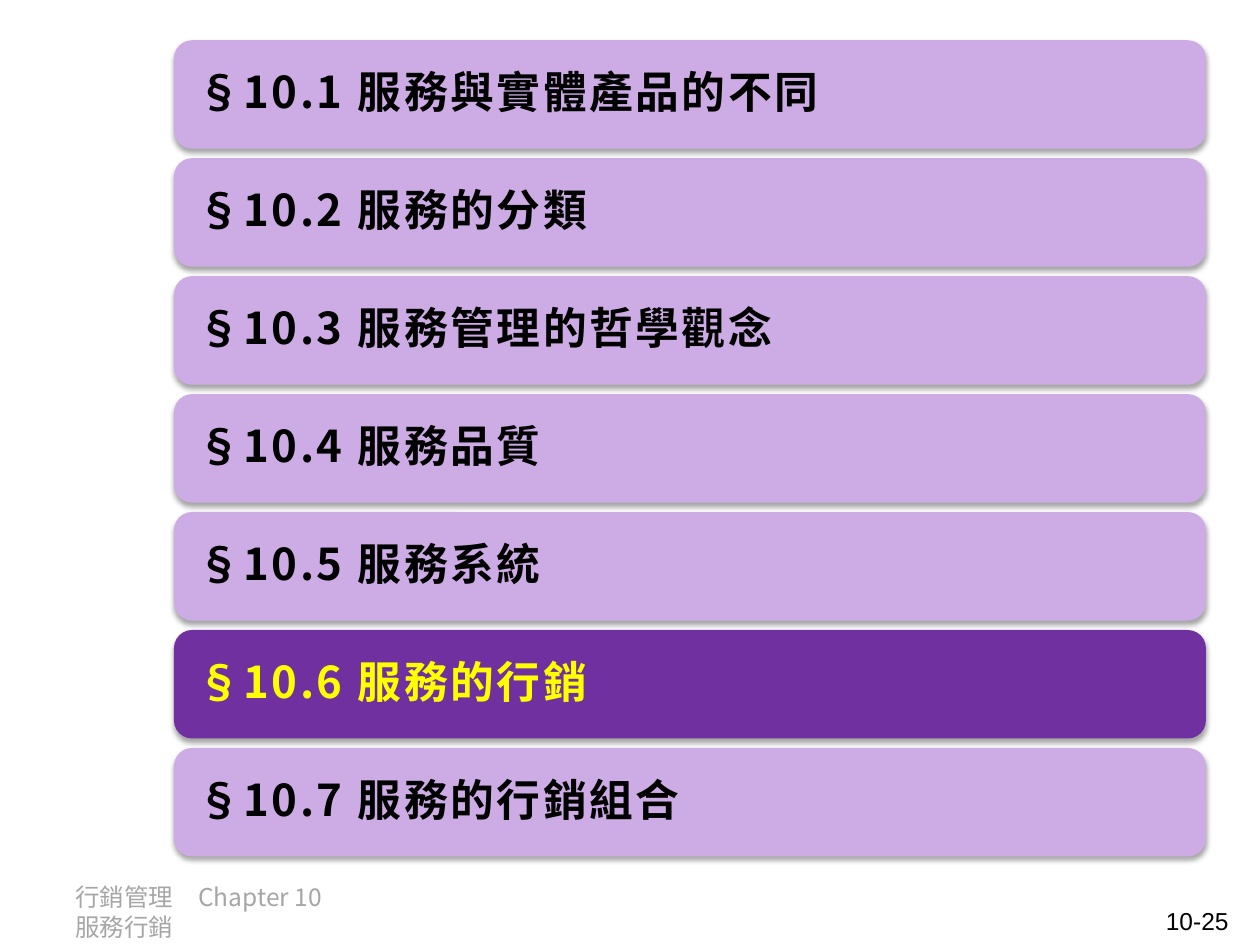
from typing import NamedTuple

from lxml import etree
from pptx import Presentation
from pptx.dml.color import RGBColor
from pptx.enum.shapes import MSO_SHAPE
from pptx.enum.text import MSO_ANCHOR, PP_ALIGN
from pptx.oxml.ns import qn
from pptx.util import Pt

ROUNDED = MSO_SHAPE.ROUNDED_RECTANGLE
MIDDLE = MSO_ANCHOR.MIDDLE
LEFT, RIGHT = PP_ALIGN.LEFT, PP_ALIGN.RIGHT

CJK_FONT, LATIN_FONT = "Noto Sans CJK SC", "Arial"
LILAC, PURPLE, YELLOW = "CDACE6", "7030A0", "FFFF00"
BLACK, GREY = "000000", "A6A6A6"

BAR_LEFT, BAR_TOP = 99.4, 23
BAR_WIDTH, BAR_HEIGHT, BAR_PITCH = 589.7, 62, 67.4


class Section(NamedTuple):
    number: str
    title: str
    current: bool = False


SECTIONS = [
    Section("§10.1 ", "服務與實體產品的不同"),
    Section("§10.2 ", "服務的分類"),
    Section("§10.3 ", "服務管理的哲學觀念"),
    Section("§10.4 ", "服務品質"),
    Section("§10.5 ", "服務系統"),
    Section("§10.6 ", "服務的行銷", current=True),
    Section("§10.7 ", "服務的行銷組合"),
]


def color(value: str) -> RGBColor:
    return RGBColor.from_string(value)


def add_span(para, text: str, size: float, font: str, fill: str,
             bold: bool = False, spacing: float = 0) -> None:
    """Append one run; East Asian letters always use the CJK font."""
    span = para.add_run()
    span.text = text
    span.font.size = Pt(size)
    span.font.bold = bold
    span.font.name = font
    span.font.color.rgb = color(fill)
    properties = span.font._element
    if spacing:
        properties.set("spc", str(int(spacing * 100)))
    latin = properties.find(qn("a:latin"))
    east_asian = etree.Element(qn("a:ea"), typeface=CJK_FONT)
    latin.addnext(east_asian)


def add_shadow(shape) -> None:
    """Give the shape a soft shadow straight below it."""
    shape.shadow.inherit = False
    effects = shape._element.spPr.find(qn("a:effectLst"))
    shadow = etree.SubElement(
        effects, qn("a:outerShdw"), blurRad=str(Pt(3.1)), dist=str(Pt(1.8)),
        dir="5400000", rotWithShape="0")
    tone = etree.SubElement(shadow, qn("a:srgbClr"), val=BLACK)
    etree.SubElement(tone, qn("a:alpha"), val="35000")


def add_bar(page, index: int, section: Section) -> None:
    bar = page.shapes.add_shape(
        ROUNDED, Pt(BAR_LEFT), Pt(BAR_TOP + index * BAR_PITCH),
        Pt(BAR_WIDTH), Pt(BAR_HEIGHT))
    bar.fill.solid()
    bar.fill.fore_color.rgb = color(PURPLE if section.current else LILAC)
    bar.line.fill.background()
    add_shadow(bar)

    frame = bar.text_frame
    frame.word_wrap = True
    frame.vertical_anchor = MIDDLE
    frame.margin_left = frame.margin_right = Pt(10.2)
    frame.margin_top = frame.margin_bottom = Pt(10.2)
    para = frame.paragraphs[0]
    para.alignment = LEFT
    para.line_spacing = 0.9
    para.space_after = Pt(8.75)
    ink = YELLOW if section.current else BLACK
    add_span(para, section.number, 25, CJK_FONT, ink, True, 1.5)
    add_span(para, section.title, 25, LATIN_FONT, ink, True, 1.5)


def add_label(page, left: float, top: float, width: float, height: float,
              align: PP_ALIGN):
    """Add a wrapping text box and return its paragraph."""
    box = page.shapes.add_textbox(Pt(left), Pt(top), Pt(width), Pt(height))
    box.text_frame.word_wrap = True
    para = box.text_frame.paragraphs[0]
    para.alignment = align
    return para


def main() -> None:
    deck = Presentation()
    deck.slide_width, deck.slide_height = Pt(720), Pt(540)
    page = deck.slides.add_slide(deck.slide_layouts[6])

    footer = add_label(page, 36, 500.4, 176.4, 28.8, LEFT)
    footer.line_spacing = Pt(17)
    add_span(footer, "行銷管理　Chapter 10", 14, CJK_FONT, GREY)
    footer.add_line_break()
    add_span(footer, "服務行銷", 14, CJK_FONT, GREY)

    number = add_label(page, 541.4, 514.1, 167.8, 20.9, RIGHT)
    add_span(number, "10-25", 14, LATIN_FONT, BLACK)

    for index, section in enumerate(SECTIONS):
        add_bar(page, index, section)

    deck.save("out.pptx")


if __name__ == "__main__":
    main()
